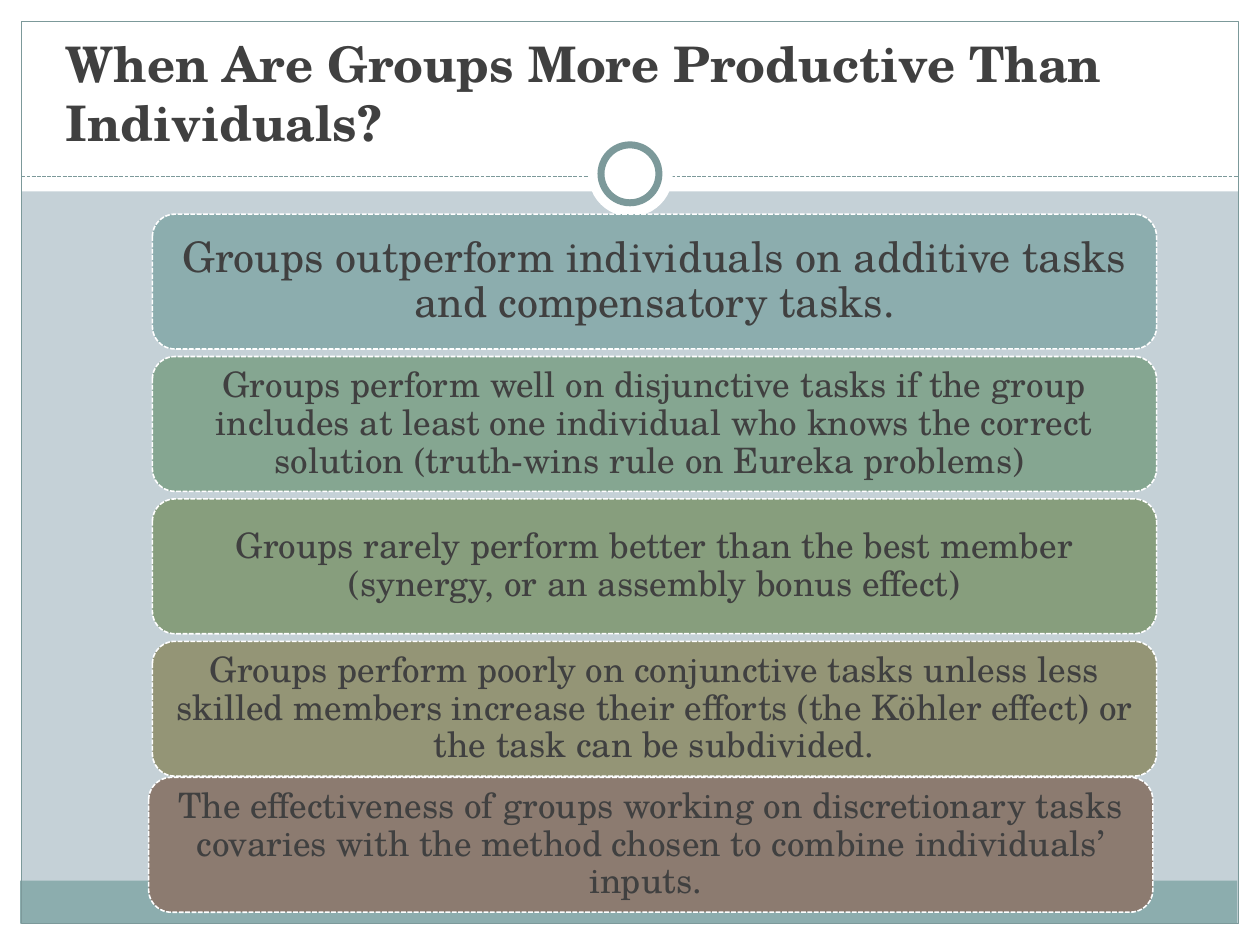
from pptx import Presentation
from pptx.dml.color import RGBColor
from pptx.enum import dml, shapes, text
from pptx.oxml import xmlchemy
from pptx.util import Inches, Pt

FONT = "TeX Gyre Schola"
WHITE = RGBColor(0xFF, 0xFF, 0xFF)
MIST = RGBColor(0xC5, 0xD1, 0xD7)
TEAL = RGBColor(0x8C, 0xAD, 0xAE)
DARK_TEAL = RGBColor(0x7C, 0x99, 0x9A)
SAGE = RGBColor(0x85, 0xA6, 0x91)
MOSS = RGBColor(0x87, 0x9E, 0x7D)
OLIVE = RGBColor(0x94, 0x95, 0x76)
BROWN = RGBColor(0x8C, 0x7B, 0x70)
INK = RGBColor(0x40, 0x40, 0x40)

TITLE = "When Are Groups More Productive Than Individuals?"
# text, size, fill, shift from the regular position
FINDINGS = [
    ("Groups outperform individuals on additive tasks and compensatory tasks.",
     24, TEAL, (0, 0)),
    ("Groups perform well on disjunctive tasks if the group includes at least one "
     "individual who knows the correct solution (truth-wins rule on Eureka problems) ",
     20, SAGE, (0, 0)),
    ("Groups rarely perform better than the best member (synergy, or an assembly "
     "bonus effect)", 20, MOSS, (0, 0)),
    ("Groups perform poorly on conjunctive tasks unless less skilled members increase "
     "their efforts (the Köhler effect) or the task can be subdivided.",
     20, OLIVE, (0, 0)),
    ("The effectiveness of groups working on discretionary tasks covaries with the "
     "method chosen to combine individuals’ inputs. ", 20, BROWN, (-0.03, -0.05)),
]
BOX_LEFT, BOX_TOP, BOX_WIDTH, BOX_HEIGHT, BOX_STEP = 1.21, 1.7, 7.97, 1.07, 1.13

RECT = shapes.MSO_SHAPE.RECTANGLE
OVAL = shapes.MSO_SHAPE.OVAL
# kind, (left, top, width, height), fill, line width
FRAME = [
    (RECT, (0, 7.33, 10, 0.17), WHITE, None),
    (RECT, (0, 0, 10, 1.52), WHITE, None),
    (RECT, (0, 0, 0.17, 7.5), WHITE, None),
    (RECT, (9.83, 0, 0.17, 7.5), WHITE, None),
    (RECT, (0.16, 6.99, 9.66, 0.34), TEAL, None),
    (RECT, (0.17, 0.17, 9.66, 7.16), None, 0.75),
]
MEDALLION = [
    (OVAL, (4.67, 1.05, 0.67, 0.67), WHITE, None),
    (OVAL, (4.77, 1.15, 0.46, 0.46), WHITE, 4),
]


def style_line(line, color, width, dashed=False):
    line.color.rgb = color
    line.width = Pt(width)
    if dashed:
        line.dash_style = dml.MSO_LINE.SQUARE_DOT


def add_shape(page, kind, place, fill, line_width=None):
    shape = page.shapes.add_shape(kind, *map(Inches, place))
    shape.shadow.inherit = False
    if fill is None:
        shape.fill.background()
    else:
        shape.fill.solid()
        shape.fill.fore_color.rgb = fill
    if line_width is None:
        shape.line.fill.background()
    else:
        style_line(shape.line, DARK_TEAL, line_width)
    return shape


def add_span(para, words, size, bold=False):
    span = para.add_run()
    span.text = words
    span.font.name = FONT
    span.font.size = Pt(size)
    span.font.bold = bold
    span.font.color.rgb = INK


def add_divider(page):
    divider = page.shapes.add_connector(
        shapes.MSO_CONNECTOR.STRAIGHT, *map(Inches, (0.17, 1.4, 9.83, 1.4)))
    style_line(divider.line, DARK_TEAL, 0.75, dashed=True)
    xmlchemy.OxmlElement("a:effectLst")
    divider._element.spPr.append(xmlchemy.OxmlElement("a:effectLst"))


def place_title(page):
    """Fill the title placeholder and bring it in front of the white band."""
    title = page.shapes.title
    title.left, title.top, title.width, title.height = map(Inches, (0.42, 0, 8.5, 1.25))
    frame = title.text_frame
    frame.auto_size = text.MSO_AUTO_SIZE.NONE
    frame.word_wrap = True
    frame.vertical_anchor = text.MSO_ANCHOR.BOTTOM
    para = frame.paragraphs[0]
    para.alignment = text.PP_ALIGN.LEFT
    add_span(para, TITLE, 28, bold=True)
    page.shapes._spTree.append(title._element)


def add_finding(page, row, words, size, fill, shift):
    place = (BOX_LEFT + shift[0], BOX_TOP + row * BOX_STEP + shift[1],
             BOX_WIDTH, BOX_HEIGHT)
    box = add_shape(page, shapes.MSO_SHAPE.ROUNDED_RECTANGLE, place, fill)
    style_line(box.line, WHITE, 0.9, dashed=True)
    frame = box.text_frame
    frame.word_wrap = True
    frame.vertical_anchor = text.MSO_ANCHOR.MIDDLE
    frame.margin_left = frame.margin_right = Inches(0.03)
    frame.margin_top = frame.margin_bottom = 0
    para = frame.paragraphs[0]
    para.alignment = text.PP_ALIGN.CENTER
    para.line_spacing = 0.9
    add_span(para, words, size)


def main():
    deck = Presentation()
    deck.slide_width, deck.slide_height = Inches(10), Inches(7.5)
    page = deck.slides.add_slide(deck.slide_layouts.get_by_name("Title Only"))
    page.background.fill.solid()
    page.background.fill.fore_color.rgb = MIST
    for part in FRAME:
        add_shape(page, *part)
    add_divider(page)
    for part in MEDALLION:
        add_shape(page, *part)
    place_title(page)
    for row, finding in enumerate(FINDINGS):
        add_finding(page, row, *finding)
    deck.save("out.pptx")


if __name__ == "__main__":
    main()
